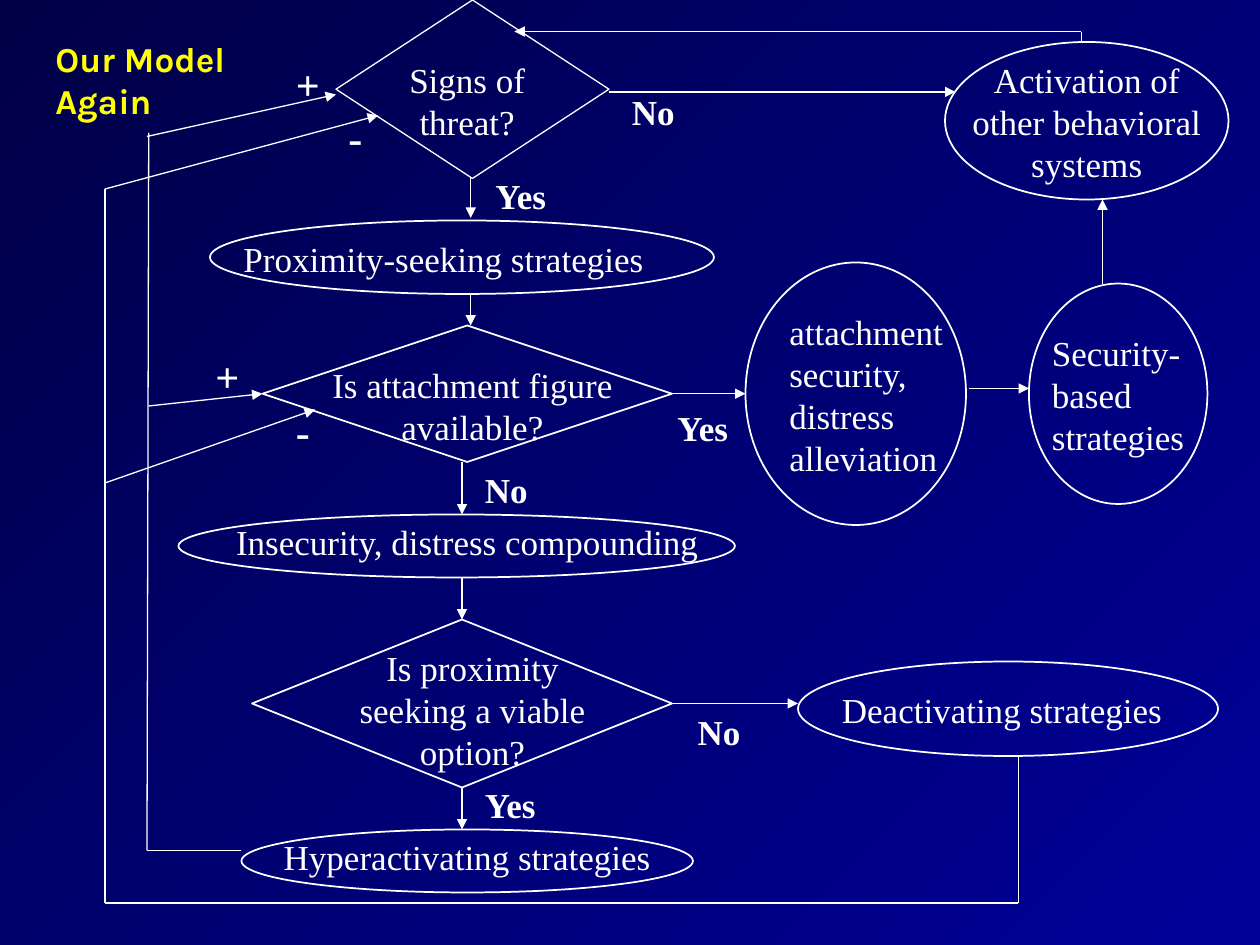
import itertools
import pptx
import pptx.dml.color
import pptx.enum.shapes
import pptx.enum.text
import pptx.oxml
import pptx.oxml.ns
import pptx.util

Pt = pptx.util.Pt
SHAPES = pptx.enum.shapes.MSO_SHAPE
LEFT = pptx.enum.text.PP_ALIGN.LEFT
CENTER = pptx.enum.text.PP_ALIGN.CENTER

COLORS = {"dark": "000047", "blue": "000099", "line": "FFFFFF", "text": "FFFFFF", "title": "FFFF00"}
FORMATS = {
    "title": {"name": "Karla", "size": Pt(20), "bold": True},
    "node": {"name": "Times New Roman", "size": Pt(20), "bold": False},
    "answer": {"name": "Times New Roman", "size": Pt(20), "bold": True},
    "sign": {"name": "Times New Roman", "size": Pt(24), "bold": True},
}

# Content: boxes are left, top, width, height in points
TITLE = ("Our Model Again", (24.5, 18, 137.5, 55))

# name: preset, outline width, outline box, text, text box, alignment
NODES = {
    "threat": (SHAPES.DIAMOND, 0.75, (192, 0, 156, 102),
               "Signs of threat?", (210, 30, 114, 55), CENTER),
    "proximity": (SHAPES.OVAL, 1, (120, 126, 288, 42),
                  "Proximity-seeking strategies", (132, 132, 282, 31), LEFT),
    "available": (SHAPES.DIAMOND, 1, (150, 186, 234, 78),
                  "Is attachment figure available?", (156, 204, 228, 55), CENTER),
    "insecurity": (SHAPES.OVAL, 1, (102, 294, 318, 36),
                   "Insecurity, distress compounding", (126, 294, 282, 31), CENTER),
    "viable": (SHAPES.DIAMOND, 1, (144, 354, 240, 96),
               "Is proximity seeking a viable option?", (186, 366, 168, 79), CENTER),
    "hyperactivating": (SHAPES.OVAL, 1, (138, 474, 258, 36),
                        "Hyperactivating strategies", (144, 474, 246, 31), CENTER),
    "security": (SHAPES.OVAL, 1, (426, 150, 126, 150),
                 "attachment security, distress alleviation", (444, 174, 108, 103), LEFT),
    "strategies": (SHAPES.OVAL, 1, (588, 162, 102, 126),
                   "Security-based strategies", (594, 186, 90, 79), LEFT),
    "activation": (SHAPES.OVAL, 1, (540, 24, 162, 90),
                   "Activation of other behavioral systems", (546, 30, 150, 79), CENTER),
    "deactivating": (SHAPES.OVAL, 1, (456, 378, 240, 54),
                     "Deactivating strategies", (474, 390, 216, 31), LEFT),
}

# text, format, left, top
LABELS = [
    ("Yes", "answer", 276, 96), ("No", "answer", 270, 264), ("Yes", "answer", 270, 444),
    ("Yes", "answer", 380, 229), ("No", "answer", 354, 48), ("No", "answer", 391.5, 402.5),
    ("+", "sign", 116, 197), ("+", "sign", 162, 30),
    ("-", "sign", 162, 228), ("-", "sign", 192, 60),
]
LABEL_SIZES = {"answer": (60, 31), "sign": (30, 36)}

# points, arrowhead at the last point, joined start, joined end
ROUTES = [
    ([(269, 101), (269, 124.5)], True, None, None),
    ([(269, 168), (269, 186)], True, None, None),
    ([(264, 264), (264, 294)], True, None, None),
    ([(264, 330), (264, 354)], True, None, ("viable", 0)),
    ([(264, 450), (264, 474)], True, ("viable", 2), None),
    ([(384, 225), (426, 225)], True, ("available", 3), None),
    ([(553.5, 222), (588, 222)], True, None, None),
    ([(630, 162), (630, 114)], True, None, None),
    ([(348, 52.5), (546, 52.5)], True, None, None),
    ([(384, 402), (456, 402)], True, ("viable", 3), None),
    # Feedback loops
    ([(618, 24), (618, 18), (294, 18)], True, None, None),
    ([(138, 486), (84, 486), (85, 76)], False, None, None),
    ([(84, 78), (192, 54)], True, None, None),
    ([(85, 232), (150, 225)], True, None, ("available", 1)),
    ([(582, 432), (582, 516), (60, 516), (60, 108), (216, 66)], True, None, None),
    ([(60, 276), (180, 234)], True, None, None),
]


def rgb(name):
    return pptx.dml.color.RGBColor.from_string(COLORS[name])


def write(frame, text, format_name, color, alignment):
    frame.word_wrap = True
    frame.auto_size = pptx.enum.text.MSO_AUTO_SIZE.SHAPE_TO_FIT_TEXT
    frame.vertical_anchor = pptx.enum.text.MSO_ANCHOR.TOP
    paragraph = frame.paragraphs[0]
    paragraph.alignment = alignment
    run = paragraph.add_run()
    run.text = text
    for attribute, value in FORMATS[format_name].items():
        setattr(run.font, attribute, value)
    run.font.color.rgb = rgb(color)


def add_text(slide, text, box, format_name, alignment=LEFT):
    shape = slide.shapes.add_textbox(*map(Pt, box))
    write(shape.text_frame, text, format_name, "text", alignment)


def add_outline(slide, preset, width, box):
    shape = slide.shapes.add_shape(preset, *map(Pt, box))
    shape.shadow.inherit = False
    shape.fill.background()
    shape.line.color.rgb = rgb("line")
    shape.line.width = Pt(width)
    return shape


def add_line(slide, start, end, arrow):
    connector = slide.shapes.add_connector(
        pptx.enum.shapes.MSO_CONNECTOR.STRAIGHT, *map(Pt, start + end))
    connector.line.color.rgb = rgb("line")
    connector.line.width = Pt(0.75)
    if arrow:
        head = pptx.oxml.parse_xml(
            f'<a:tailEnd {pptx.oxml.ns.nsdecls("a")} type="triangle"/>')
        connector.line._get_or_add_ln().append(head)
    effects = pptx.oxml.parse_xml(f'<a:effectLst {pptx.oxml.ns.nsdecls("a")}/>')
    connector._element.spPr.append(effects)
    return connector


def main():
    presentation = pptx.Presentation()
    presentation.slide_width, presentation.slide_height = Pt(720), Pt(540)
    slide = presentation.slides.add_slide(presentation.slide_layouts[5])

    # Background
    fill = slide.background.fill
    fill.gradient()
    fill.gradient_angle = 315
    for stop, color, position in zip(fill.gradient_stops, ("dark", "blue"), (0, 1)):
        stop.color.rgb = rgb(color)
        stop.position = position

    # Title
    text, box = TITLE
    title = slide.shapes.title
    for attribute, value in zip(("left", "top", "width", "height"), box):
        setattr(title, attribute, Pt(value))
    write(title.text_frame, text, "title", "title", LEFT)

    # Nodes
    outlines = {}
    for name, (preset, width, box, text, text_box, alignment) in NODES.items():
        outlines[name] = add_outline(slide, preset, width, box)
        add_text(slide, text, text_box, "node", alignment)

    # Arrows and feedback loops
    for points, arrow, begin, end in ROUTES:
        segments = list(itertools.pairwise(points))
        lines = [add_line(slide, *segment, arrow and segment == segments[-1])
                 for segment in segments]
        if begin:
            lines[0].begin_connect(outlines[begin[0]], begin[1])
        if end:
            lines[-1].end_connect(outlines[end[0]], end[1])

    # Answers and signs
    for text, format_name, left, top in LABELS:
        add_text(slide, text, (left, top, *LABEL_SIZES[format_name]), format_name)

    presentation.save("out.pptx")


if __name__ == "__main__":
    main()
